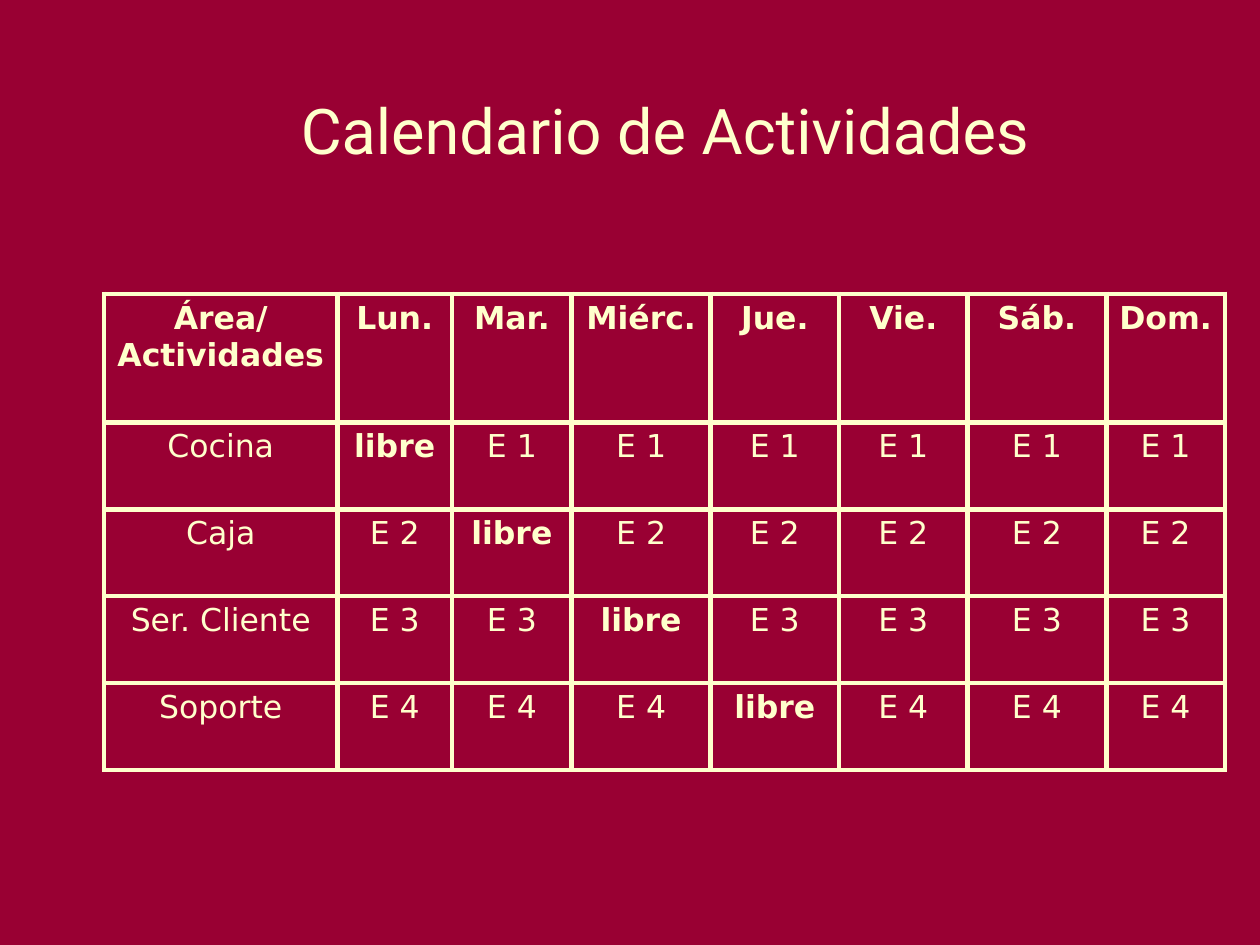
from pptx import Presentation
from pptx.dml.color import RGBColor
from pptx.enum.text import MSO_ANCHOR, PP_ALIGN
from pptx.oxml.ns import qn
from pptx.util import Pt
from lxml import etree

CENTER = PP_ALIGN.CENTER
TOP = MSO_ANCHOR.TOP
WINE, CREAM = "990033", "FFFFCC"
HEADERS = ["Área/ Actividades", "Lun.", "Mar.", "Miérc.", "Jue.", "Vie.", "Sáb.", "Dom."]
AREAS = ["Cocina", "Caja", "Ser. Cliente", "Soporte"]
COL_WIDTHS = [133.2, 65.5, 68.4, 79.2, 73.4, 73.4, 79.2, 67.7]
HEADER_HEIGHT = 73.4


def rgb(value):
    """Turn a hex string into a colour."""
    return RGBColor.from_string(value)


def put_text(tf, text, size=18, font="DejaVu Sans", color=CREAM, bold=False, align=CENTER):
    """Write one formatted paragraph into a text frame."""
    p = tf.paragraphs[0]
    p.alignment = align
    r = p.add_run()
    r.text = text
    r.font.size = Pt(size)
    r.font.name = font
    r.font.bold = bold
    r.font.color.rgb = rgb(color)


def add_borders(cell, color=CREAM, width=3):
    """Draw a solid line on all four sides of a cell."""
    tc_pr = cell._tc.get_or_add_tcPr()
    for side in ("a:lnL", "a:lnR", "a:lnT", "a:lnB"):
        ln = etree.SubElement(tc_pr, qn(side), w=str(Pt(width)))
        fill = etree.SubElement(ln, qn("a:solidFill"))
        etree.SubElement(fill, qn("a:srgbClr"), val=color)


def add_title(s, x, y, w, h):
    """Place the slide title in the given box."""
    tf = s.shapes.add_textbox(Pt(x), Pt(y), Pt(w), Pt(h)).text_frame
    tf.word_wrap = False
    tf.vertical_anchor = TOP
    put_text(tf, "Calendario de Actividades", size=36, font="Roboto")


def schedule_rows():
    """Build the rows, with each team free one day later than the one before."""
    rows = [HEADERS]
    for team, area in enumerate(AREAS, 1):
        days = ["libre" if day == team else f"E {team}" for day in range(1, len(HEADERS))]
        rows.append([area] + days)
    return rows


def add_schedule(s, x, y, w, h):
    """Place the weekly schedule table in the given box."""
    rows = schedule_rows()
    frame = s.shapes.add_table(len(rows), len(HEADERS), Pt(x), Pt(y), Pt(w), Pt(h))
    table = frame.table
    table.first_row = table.horz_banding = False
    for col, width in zip(table.columns, COL_WIDTHS):
        col.width = Pt(width * w / sum(COL_WIDTHS))
    for i, row in enumerate(rows):
        table.rows[i].height = Pt((h - HEADER_HEIGHT) / len(AREAS) if i else HEADER_HEIGHT)
        for j, text in enumerate(row):
            cell = table.cell(i, j)
            add_borders(cell)
            cell.fill.background()
            cell.vertical_anchor = TOP
            put_text(cell.text_frame, text, bold=i == 0 or text == "libre")


def main():
    """Build and save the slide."""
    prs = Presentation()
    prs.slide_width, prs.slide_height = Pt(720), Pt(540)
    s = prs.slides.add_slide(prs.slide_layouts[6])
    s.background.fill.solid()
    s.background.fill.fore_color.rgb = rgb(WINE)
    add_schedule(s, 59.5, 168, 640.5, 272)
    add_title(s, 105, 49, 550, 51)
    prs.save("out.pptx")


if __name__ == "__main__":
    main()
